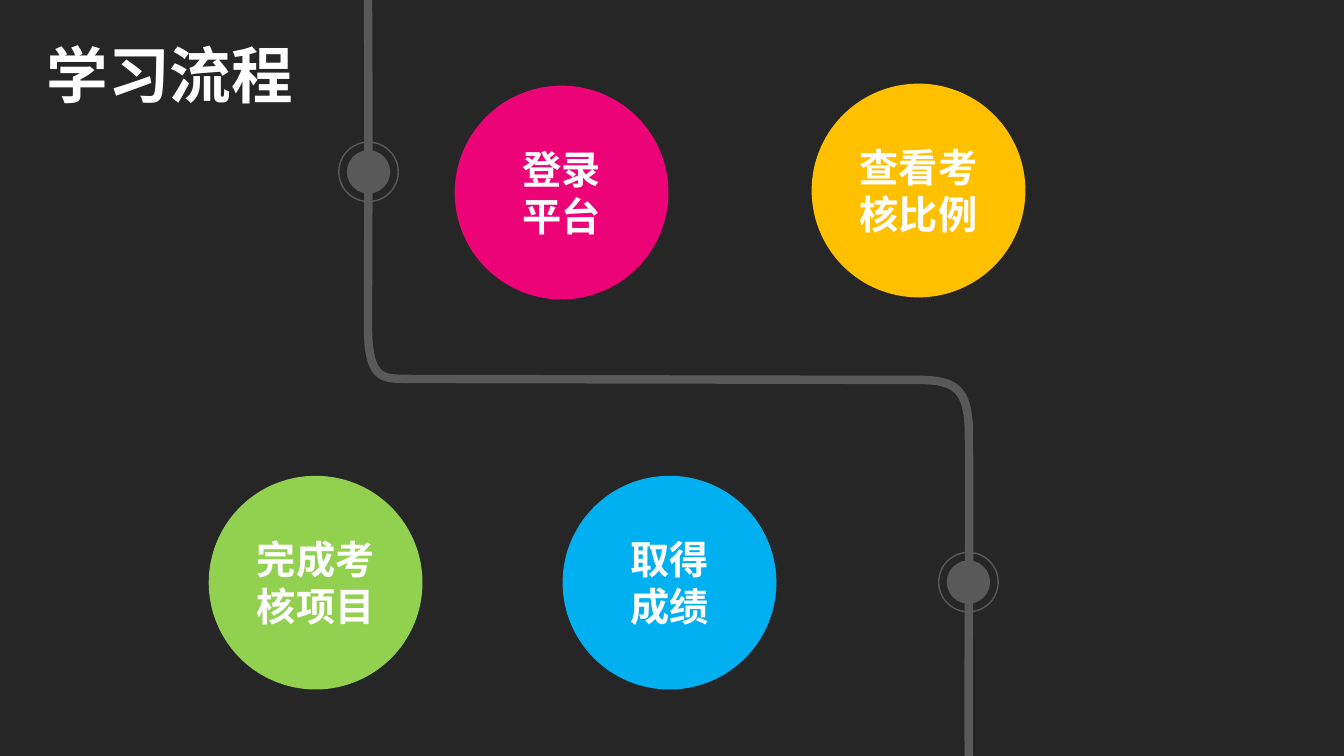
"""Build the study process slide: four steps beside a winding road."""
from lxml.etree import SubElement
from pptx import Presentation
from pptx.dml.color import RGBColor
from pptx.enum.shapes import MSO_SHAPE
from pptx.enum.text import MSO_ANCHOR, MSO_AUTO_SIZE, PP_ALIGN
from pptx.oxml.ns import qn
from pptx.util import Pt

PX = 9144
FONT = "Noto Sans CJK SC"
DARK = RGBColor(0x26, 0x26, 0x26)
GREY = RGBColor(0x59, 0x59, 0x59)
WHITE = RGBColor(0xFF, 0xFF, 0xFF)
PINK = RGBColor(0xED, 0x03, 0x78)
AMBER = RGBColor(0xFF, 0xC0, 0x00)
GREEN = RGBColor(0x92, 0xD0, 0x50)
BLUE = RGBColor(0x00, 0xB0, 0xF0)

STEPS = [
    (451, 85, PINK, "登录\n平台"),
    (805, 83, AMBER, "查看考核比例"),
    (207, 472, GREEN, "完成考核项目"),
    (558, 472, BLUE, "取得\n成绩"),
]
STOPS = [(365, 170), (960, 577)]
ROAD = [
    [(365, -5), (366, 156), (365, 267), (365, 324)],
    [(365, 324), (365, 381), (383, 375), (406, 376)],
    [(916, 377), (950, 378), (959, 389), (961, 424)],
    [(961, 424), (962, 570), (960, 661), (961, 755)],
]


def curve(ends, count=24):
    """Return points along a cubic curve, in EMU."""
    spots = []
    for i in range(count + 1):
        t = i / count
        parts = ((1 - t) ** 3, 3 * t * (1 - t) ** 2, 3 * t * t * (1 - t), t ** 3)
        spots.append(tuple(round(PX * sum(w * p[k] for w, p in zip(parts, ends)))
                           for k in (0, 1)))
    return spots


class Deck:
    """Hold the style and the current slide."""

    def __init__(self):
        self.prs = Presentation()
        self.prs.slide_width = 1333 * PX
        self.prs.slide_height = 750 * PX
        self.slide = self.prs.slides.add_slide(self.prs.slide_layouts[5])
        back = self.slide.background.fill
        back.solid()
        back.fore_color.rgb = DARK

    def label(self, shape, text, size):
        """Put centred bold white text in a shape."""
        frame = shape.text_frame
        frame.text = text
        frame.word_wrap = True
        frame.auto_size = MSO_AUTO_SIZE.NONE
        frame.vertical_anchor = MSO_ANCHOR.MIDDLE
        for para in frame.paragraphs:
            para.alignment = PP_ALIGN.CENTER
            font = para.font
            font.name, font.size, font.bold = FONT, Pt(size), True
            font.color.rgb = WHITE
            props = para._p.pPr.find(qn("a:defRPr"))
            SubElement(props, qn("a:ea")).set("typeface", FONT)

    def title(self, text, left, top, width, height):
        """Place and fill the title."""
        head = self.slide.shapes.title
        head.left, head.top = left * PX, top * PX
        head.width, head.height = width * PX, height * PX
        self.label(head, text, 44)

    def disc(self, left, top, size, fill=None, line=None):
        """Draw a filled or outlined circle."""
        shape = self.slide.shapes.add_shape(
            MSO_SHAPE.OVAL, left * PX, top * PX, size * PX, size * PX)
        self.paint(shape, fill, line, 1)
        return shape

    def paint(self, shape, fill, line, width):
        """Set the fill and line of a shape."""
        shape.shadow.inherit = False
        if fill is None:
            shape.fill.background()
        else:
            shape.fill.solid()
            shape.fill.fore_color.rgb = fill
        if line is None:
            shape.line.fill.background()
        else:
            shape.line.color.rgb = line
            shape.line.width = Pt(width)

    def road(self, parts):
        """Draw one open line through all the curves."""
        spots = [spot for part in parts for spot in curve(part)]
        pen = self.slide.shapes.build_freeform(*spots[0])
        pen.add_line_segments(spots[1:], close=False)
        self.paint(pen.convert_to_shape(), None, GREY, 6)

    def stop(self, x, y):
        """Draw a ringed dot around a centre."""
        self.disc(x - 21, y - 21, 43, fill=GREY)
        self.disc(x - 29, y - 29, 59, line=GREY)

    def step(self, left, top, fill, text):
        """Draw one labelled step."""
        self.label(self.disc(left, top, 212, fill), text, 28)


def main():
    """Build and save the slide."""
    deck = Deck()
    deck.title("学习流程", 10, 28, 317, 90)
    deck.road(ROAD)
    for spot in STOPS:
        deck.stop(*spot)
    for step in STEPS:
        deck.step(*step)
    deck.prs.save("out.pptx")


if __name__ == "__main__":
    main()
